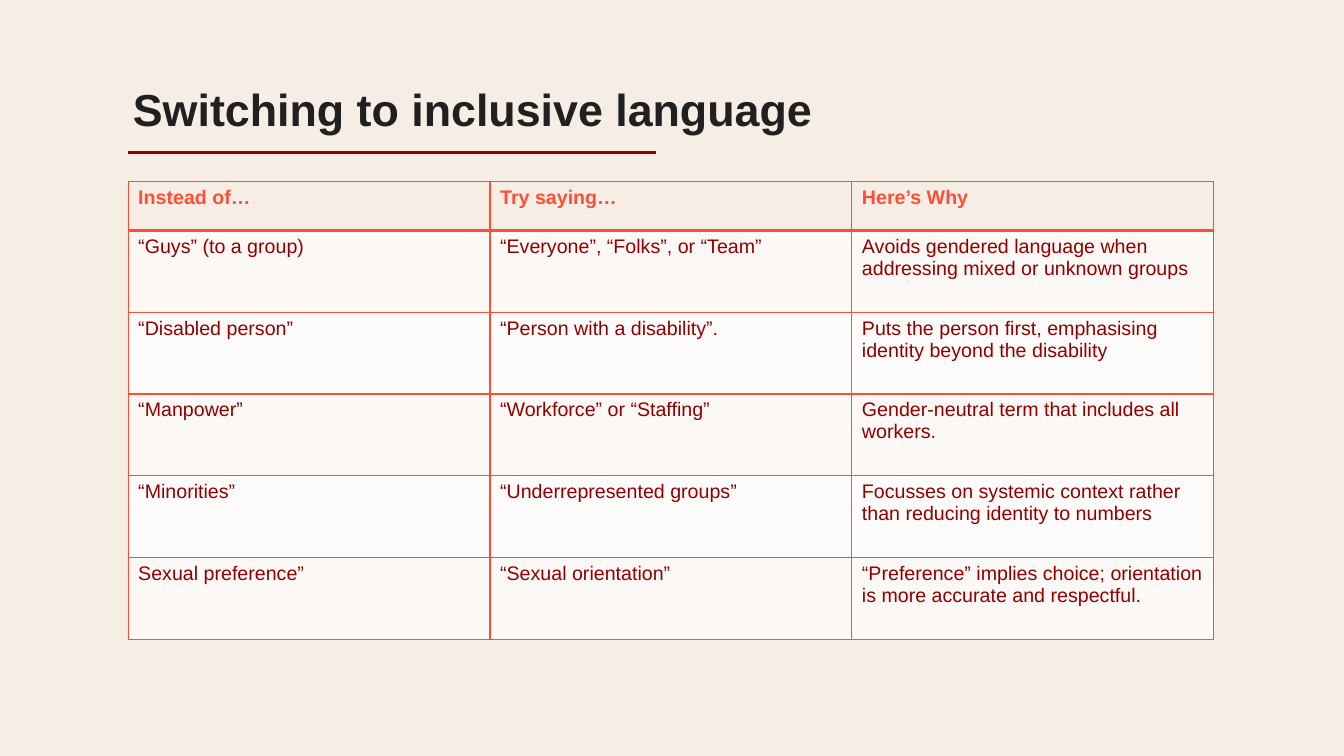
from lxml.etree import SubElement
from pptx import Presentation
from pptx.dml.color import RGBColor
from pptx.enum.shapes import MSO_CONNECTOR
from pptx.enum.text import MSO_ANCHOR
from pptx.oxml.ns import qn
from pptx.util import Cm, Pt

CREAM = RGBColor(0xF6, 0xEE, 0xE5)
INK = RGBColor(0x20, 0x20, 0x20)
CORAL = RGBColor(0xFF, 0x4E, 0x36)
MAROON = RGBColor(0x91, 0x00, 0x00)
BANDS = (RGBColor(0xFB, 0xF8, 0xF5), RGBColor(0xFD, 0xFC, 0xFA))

LEFT = 3.23
COLUMN_WIDTH = 9.12
HEADER_HEIGHT, ROW_HEIGHT = 1.24, 2.06

WORDING = [
    ("Instead of…", "Try saying…", "Here’s Why"),
    ("“Guys” (to a group)", "“Everyone”, “Folks”, or “Team”",
     "Avoids gendered language when addressing mixed or unknown groups"),
    ("“Disabled person”", "“Person with a disability”.",
     "Puts the person first, emphasising identity beyond the disability"),
    ("“Manpower”", "“Workforce” or “Staffing”",
     "Gender-neutral term that includes all workers."),
    ("“Minorities”", "“Underrepresented groups”",
     "Focusses on systemic context rather than reducing identity to numbers"),
    ("Sexual preference”", "“Sexual orientation”",
     "“Preference” implies choice; orientation is more accurate and respectful."),
]


class SlideBuilder:
    font_name = "Arial"

    def __init__(self, page):
        self.page = page

    def background(self, color):
        fill = self.page.background.fill
        fill.solid()
        fill.fore_color.rgb = color

    def style(self, para, size, color, bold):
        for span in para.runs:
            span.font.name = self.font_name
            span.font.size = Pt(size)
            span.font.bold = bold
            span.font.color.rgb = color

    def title(self, text, left, top, width, height):
        box = self.page.shapes.add_textbox(Cm(left), Cm(top), Cm(width), Cm(height))
        frame = box.text_frame
        frame.word_wrap = True
        frame.vertical_anchor = MSO_ANCHOR.MIDDLE
        frame.text = text
        para = frame.paragraphs[0]
        para.line_spacing = 0.9
        self.style(para, 32, INK, True)

    def rule(self, left, top, width):
        line = self.page.shapes.add_connector(
            MSO_CONNECTOR.STRAIGHT, Cm(left), Cm(top), Cm(left + width), Cm(top))
        line.line.color.rgb = MAROON
        line.line.width = Pt(2)
        SubElement(line._element.spPr, qn("a:effectLst"))

    def borders(self, cell, top, bottom):
        properties = cell._tc.get_or_add_tcPr()
        for side, width in (("L", 1), ("R", 1), ("T", top), ("B", bottom)):
            border = SubElement(properties, qn(f"a:ln{side}"), w=str(Pt(width)))
            fill = SubElement(border, qn("a:solidFill"))
            SubElement(fill, qn("a:srgbClr"), val=str(CORAL))

    def table(self, rows, left, top):
        columns = len(rows[0])
        height = HEADER_HEIGHT + ROW_HEIGHT * (len(rows) - 1)
        table = self.page.shapes.add_table(
            len(rows), columns, Cm(left), Cm(top),
            Cm(COLUMN_WIDTH * columns), Cm(height)).table
        for column in table.columns:
            column.width = Cm(COLUMN_WIDTH)
        for number, texts in enumerate(rows):
            header = number == 0
            table.rows[number].height = Cm(HEADER_HEIGHT if header else ROW_HEIGHT)
            for position, text in enumerate(texts):
                cell = table.cell(number, position)
                # The header is set off by a heavy line
                self.borders(cell, 3 if number == 1 else 1, 3 if header else 1)
                cell.fill.solid()
                cell.fill.fore_color.rgb = CREAM if header else BANDS[(number - 1) % 2]
                cell.text_frame.text = text
                self.style(cell.text_frame.paragraphs[0], 14,
                           CORAL if header else MAROON, header)


def main():
    deck = Presentation()
    deck.slide_width, deck.slide_height = Cm(33.87), Cm(19.05)
    builder = SlideBuilder(deck.slides.add_slide(deck.slide_layouts[6]))
    builder.background(CREAM)

    # Heading
    builder.title("Switching to inclusive language", 3.1, 2.16, 29.34, 1.35)

    # Comparison of phrases
    builder.table(WORDING, LEFT, 4.57)

    # Line under the heading
    builder.rule(LEFT, 3.84, 13.31)
    deck.save("out.pptx")


if __name__ == "__main__":
    main()
